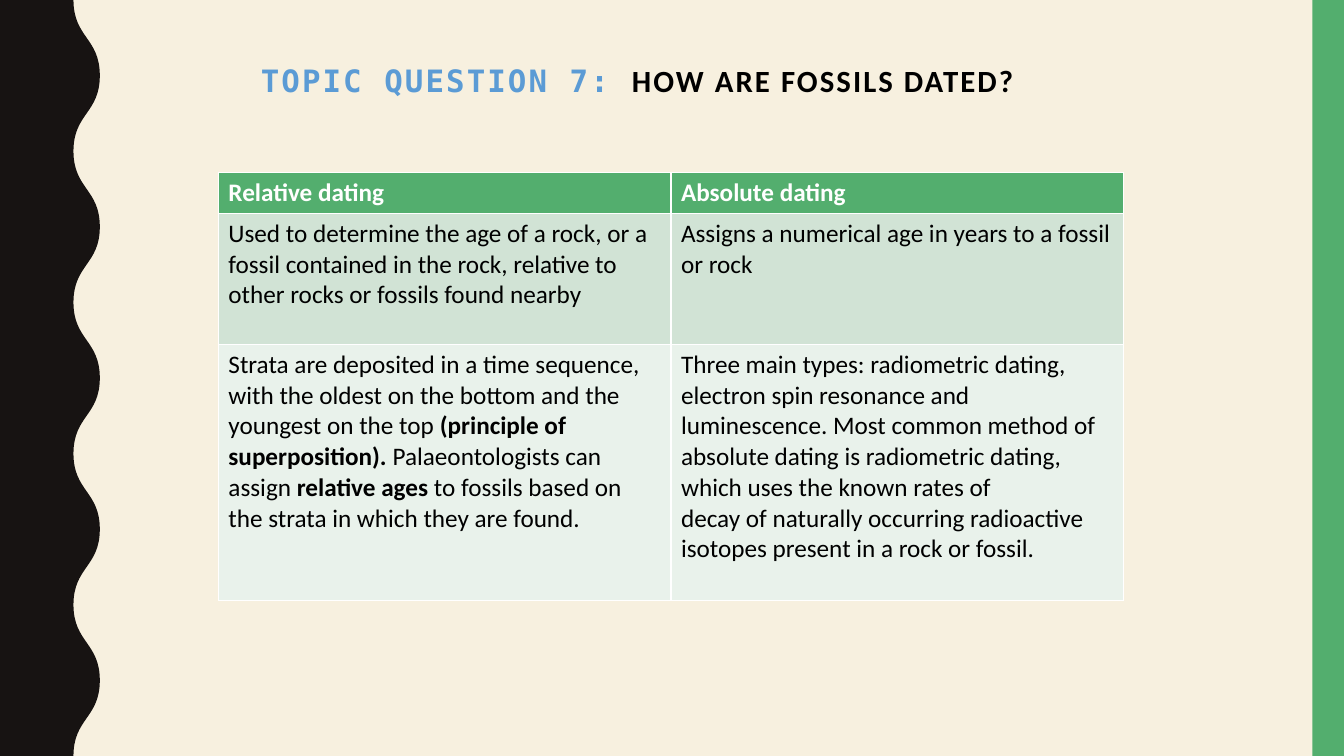
from dataclasses import dataclass

from lxml import etree
from pptx import Presentation
from pptx import util as u
from pptx.dml.color import RGBColor
from pptx.enum import shapes, text
from pptx.oxml.ns import qn

Pt = u.Pt


@dataclass(frozen=True)
class Theme:
    background: str = "F7F0DF"
    dark: str = "171312"
    green: str = "53AE6E"
    blue: str = "5B9BD5"
    black: str = "000000"
    white: str = "FFFFFF"
    bands: tuple = ("D1E3D5", "E9F2EB")
    body_font: str = "Calibri"
    label_font: str = "DejaVu Sans Mono"
    title_size: float = 22
    body_size: float = 18


THEME = Theme()
WIDTH, HEIGHT = 960, 540

# Each cell is a list of paragraphs, each paragraph a list of (text, bold) runs
HEADER = [[[("Relative dating", True)]], [[("Absolute dating", True)]]]
PURPOSE = [
    [[("Used to determine the age of a rock, or a fossil contained in the rock, "
       "relative to other rocks or fossils found nearby", False)]],
    [[("Assigns a numerical age in years to a fossil or rock", False)]],
]
METHOD = [
    [[("Strata are deposited in a time sequence, with the oldest on the bottom "
       "and the youngest on the top ", False),
      ("(principle of superposition). ", True),
      ("Palaeontologists can assign ", False),
      ("relative ages ", True),
      ("to fossils based on the strata in which they are found.", False)]],
    [[("Three main types: radiometric dating, electron spin resonance and "
       "luminescence. Most common method of absolute dating is radiometric "
       "dating, which uses the known rates of", False)],
     [("decay of naturally occurring radioactive isotopes present in a rock "
       "or fossil.", False)]],
]
ROWS = [HEADER, PURPOSE, METHOD]
ROW_HEIGHTS = [29.2, 93.6, 183.2]


def paint(fill, color):
    fill.solid()
    fill.fore_color.rgb = RGBColor.from_string(color)


def paint_shape(shape, color):
    shape.shadow.inherit = False
    paint(shape.fill, color)
    shape.line.fill.background()


def add_run(paragraph, words, color, size, font=THEME.body_font, bold=False):
    run = paragraph.add_run()
    run.text = words
    run.font.name = font
    run.font.size = Pt(size)
    run.font.bold = bold
    paint(run.font.fill, color)
    return run


def add_side_bar(slide):
    bar = slide.shapes.add_shape(shapes.MSO_SHAPE.RECTANGLE,
                                 Pt(937.4), 0, Pt(WIDTH - 937.4), Pt(HEIGHT))
    paint_shape(bar, THEME.green)


def curve_segment(segment, start, end):
    """Turn a straight segment into an S-curve with vertical ends."""
    middle = (start[1] + end[1]) // 2
    segment.tag = qn("a:cubicBezTo")
    segment.clear()
    for x, y in ((start[0], middle), (end[0], middle), end):
        etree.SubElement(segment, qn("a:pt"), x=str(x), y=str(y))


def add_wave(slide, trough=5250, crest=7130, half_waves=10):
    """Dark band with a wavy right edge, measured in hundredths of a point."""
    bottom = HEIGHT * 100
    half = bottom // half_waves
    edge = [(crest if index % 2 else trough, index * half)
            for index in range(half_waves + 1)]
    builder = slide.shapes.build_freeform(*edge[0], scale=Pt(1) / 100)
    builder.add_line_segments([*edge[1:], (0, bottom), (0, 0)], close=True)
    wave = builder.convert_to_shape()
    segments = list(wave._element.iter(qn("a:lnTo")))
    for segment, start, end in zip(segments, edge, edge[1:]):
        curve_segment(segment, start, end)
    paint_shape(wave, THEME.dark)


def add_title(slide):
    box = slide.shapes.add_textbox(Pt(179.3), 0, Pt(601.2), Pt(117.4))
    frame = box.text_frame
    frame.word_wrap = True
    frame.vertical_anchor = text.MSO_ANCHOR.MIDDLE
    paragraph = frame.paragraphs[0]
    paragraph.line_spacing = 0.9
    for words, color, font in (
            ("TOPIC QUESTION 7: ", THEME.blue, THEME.label_font),
            ("HOW ARE FOSSILS DATED?", THEME.black, THEME.body_font)):
        run = add_run(paragraph, words, color, THEME.title_size, font, True)
        run.font._element.set("spc", "150")


def set_borders(cell, color, width=1):
    properties = cell._tc.get_or_add_tcPr()
    for index, side in enumerate(("lnL", "lnR", "lnT", "lnB")):
        line = etree.Element(qn(f"a:{side}"), w=str(Pt(width)))
        fill = etree.SubElement(line, qn("a:solidFill"))
        etree.SubElement(fill, qn("a:srgbClr"), val=color)
        properties.insert(index, line)


def fill_cell(cell, paragraphs, fill, color):
    paint(cell.fill, fill)
    set_borders(cell, THEME.white)
    frame = cell.text_frame
    for index, runs in enumerate(paragraphs):
        paragraph = frame.add_paragraph() if index else frame.paragraphs[0]
        for words, bold in runs:
            add_run(paragraph, words, color, THEME.body_size, bold=bold)


def add_dating_table(slide):
    table = slide.shapes.add_table(len(ROWS), 2, Pt(156), Pt(123.2),
                                   Pt(646.6), Pt(sum(ROW_HEIGHTS))).table
    fills = (THEME.green, *THEME.bands)
    for row, (cells, height, fill) in enumerate(zip(ROWS, ROW_HEIGHTS, fills)):
        table.rows[row].height = Pt(height)
        color = THEME.black if row else THEME.white
        for column, paragraphs in enumerate(cells):
            fill_cell(table.cell(row, column), paragraphs, fill, color)


def main():
    presentation = Presentation()
    presentation.slide_width, presentation.slide_height = Pt(WIDTH), Pt(HEIGHT)
    slide = presentation.slides.add_slide(presentation.slide_layouts[6])

    # Backdrop
    paint(slide.background.fill, THEME.background)
    add_side_bar(slide)
    add_wave(slide)

    # Content
    add_dating_table(slide)
    add_title(slide)

    presentation.save("out.pptx")


if __name__ == "__main__":
    main()
